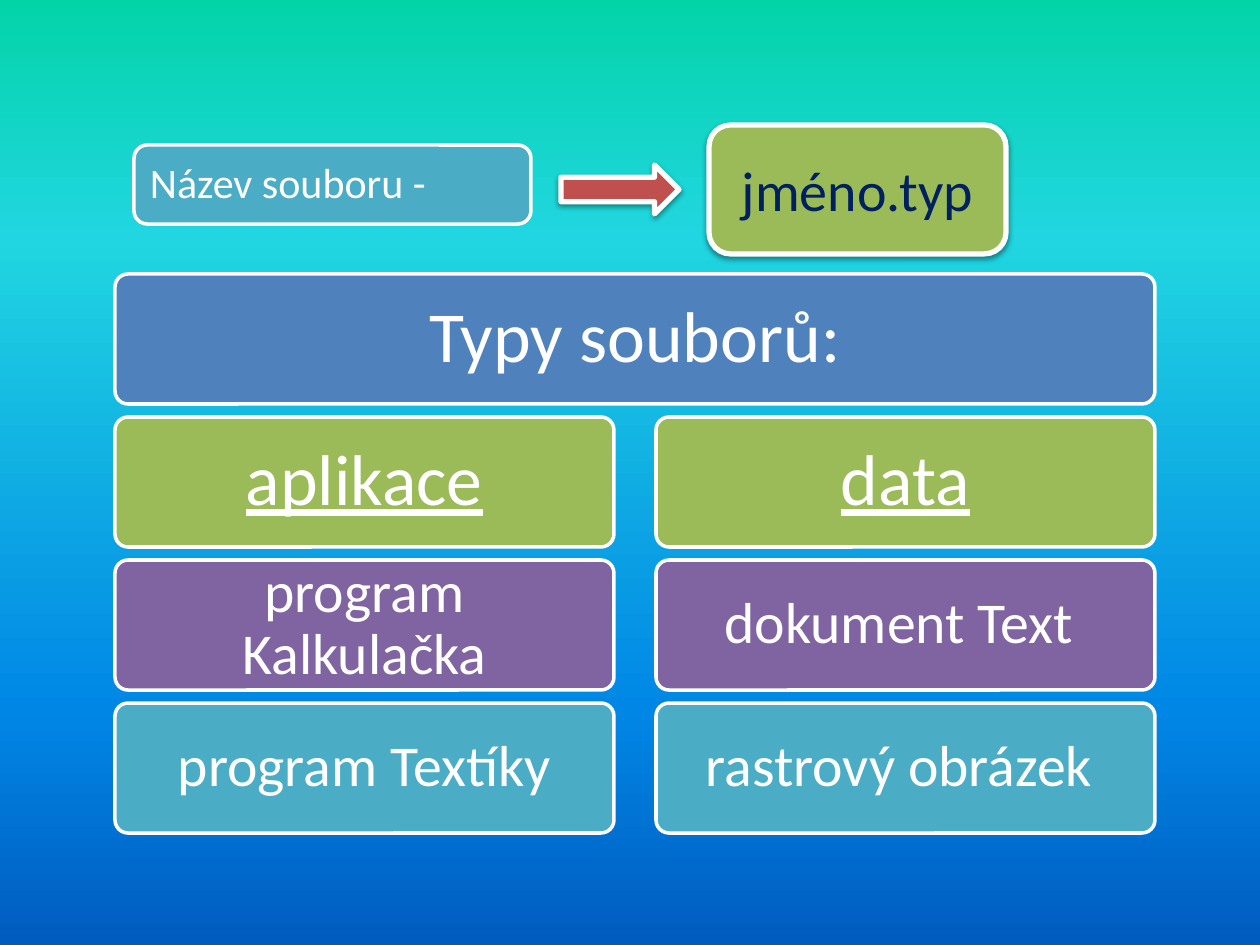
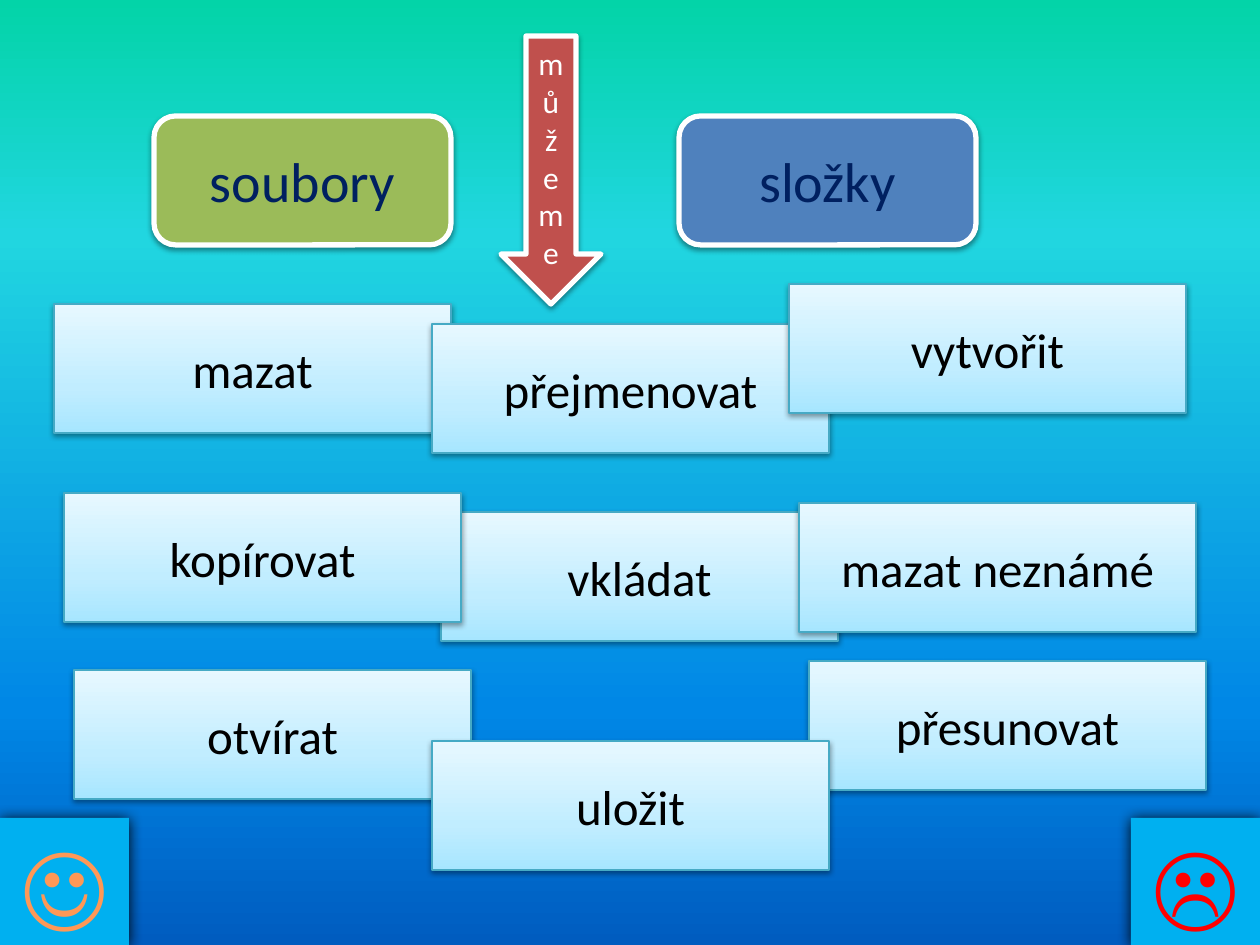
"""Two slides about file types and what can be done with files and folders."""

import dataclasses

import lxml.etree
import pptx
import pptx.dml.color
import pptx.enum.shapes
import pptx.enum.text
import pptx.oxml.ns
import pptx.util

SHAPE = pptx.enum.shapes.MSO_SHAPE
ALIGN = pptx.enum.text.PP_ALIGN
MIDDLE = pptx.enum.text.MSO_ANCHOR.MIDDLE
EMU_PER_PX = 914400 / 126
qn = pptx.oxml.ns.qn


@dataclasses.dataclass(frozen=True)
class Theme:
    font: str = "Calibri"
    white: str = "FFFFFF"
    black: str = "000000"
    navy: str = "002060"
    green: str = "9BBB59"
    blue: str = "4F81BD"
    purple: str = "8064A2"
    teal: str = "4BACC6"
    red: str = "C0504D"
    sky: str = "00B0F0"
    orange: str = "FF9856"
    alert: str = "FF0000"
    card_line: str = "46AAC5"
    backdrop: tuple = ((0, "03D4A8"), (25, "21D6E0"), (75, "0087E6"), (100, "005CBF"))
    card_fill: tuple = ((0, "A7E6FF"), (35, "C1EDFF"), (100, "E7F8FF"))
    soft_shadow: tuple = (38, 3.1, 1.6)
    deep_shadow: tuple = (100, 8.5, 1)
    heading: int = 41
    item: int = 33
    badge: int = 32
    card: int = 28
    label: int = 24
    arrow: int = 18
    face: int = 54


def px(length):
    return round(length * EMU_PER_PX)


def rgb(code):
    return pptx.dml.color.RGBColor.from_string(code)


def add_color(parent, code, alpha=100):
    color = lxml.etree.SubElement(parent, qn("a:srgbClr"), val=code)
    if alpha < 100:
        lxml.etree.SubElement(color, qn("a:alpha"), val=str(alpha * 1000))


def paint_gradient(fill, element, stops, angle):
    fill.gradient()
    fill.gradient_angle = angle
    stop_list = element.find(".//" + qn("a:gsLst"))
    for stop in list(stop_list):
        stop_list.remove(stop)
    for position, code in stops:
        stop = lxml.etree.SubElement(stop_list, qn("a:gs"), pos=str(position * 1000))
        add_color(stop, code)


class Painter:
    def __init__(self, deck, theme):
        self.deck = deck
        self.theme = theme
        self.page = None
        master = deck.slide_master
        paint_gradient(master.background.fill, master.element, theme.backdrop, 270)

    def new_page(self, layout):
        self.page = self.deck.slides.add_slide(self.deck.slide_layouts[layout])

    def shape(self, kind, area, fill, line=None, width=3, shadow=None):
        box = self.page.shapes.add_shape(kind, *map(px, area))
        if isinstance(fill, tuple):
            paint_gradient(box.fill, box.element, fill, 90)
        else:
            box.fill.solid()
            box.fill.fore_color.rgb = rgb(fill)
        if line:
            box.line.color.rgb = rgb(line)
            box.line.width = pptx.util.Pt(width)
        else:
            box.line.fill.background()
        box.shadow.inherit = False
        if shadow:
            self.shadow(box, *shadow)
        return box

    def shadow(self, box, alpha, blur, distance):
        effects = box.element.spPr.find(qn("a:effectLst"))
        outer = lxml.etree.SubElement(
            effects, qn("a:outerShdw"),
            blurRad=str(pptx.util.Pt(blur)), dist=str(pptx.util.Pt(distance)),
            dir="5400000", rotWithShape="0")
        add_color(outer, self.theme.black, alpha)

    def caption(self, box, text, size, color, align=ALIGN.CENTER, inset=None, spacing=None):
        frame = box.text_frame
        frame.text = text
        frame.word_wrap = True
        frame.auto_size = pptx.enum.text.MSO_AUTO_SIZE.NONE
        frame.vertical_anchor = MIDDLE
        if inset is not None:
            frame.margin_left = frame.margin_right = px(inset)
            frame.margin_top = frame.margin_bottom = px(inset)
        para = frame.paragraphs[0]
        para.alignment = align
        if spacing:
            para.line_spacing = spacing
        font = para.runs[0].font
        font.name = self.theme.font
        font.size = pptx.util.Pt(size)
        font.color.rgb = rgb(color)
        return font

    def panel(self, area, fill, rounding=0.1):
        box = self.shape(SHAPE.ROUNDED_RECTANGLE, area, fill, self.theme.white, 2)
        box.adjustments[0] = rounding
        return box

    def title(self, area, text, fill):
        title = self.page.shapes.title
        title.left, title.top, title.width, title.height = map(px, area)
        title.element.addprevious(self.panel(area, fill).element)
        self.caption(title, text, self.theme.heading, self.theme.white, inset=21, spacing=0.9)

    def tile(self, area, text, fill, size, inset, underline=False):
        font = self.caption(self.panel(area, fill), text, size, self.theme.white,
                            inset=inset, spacing=0.9)
        if underline:
            font.underline = True

    def label(self, area, text, fill):
        self.caption(self.panel(area, fill, 0.17), text, self.theme.label, self.theme.white,
                     ALIGN.LEFT, inset=12, spacing=0.9)

    def badge(self, left, top, text, fill):
        box = self.shape(SHAPE.FLOWCHART_ALTERNATE_PROCESS, (left, top, 297, 129), fill,
                         self.theme.white, shadow=self.theme.soft_shadow)
        self.caption(box, text, self.theme.badge, self.theme.navy)

    def arrow(self, kind, area, text=None):
        box = self.shape(kind, area, self.theme.red, self.theme.white,
                         shadow=self.theme.soft_shadow)
        if text:
            self.caption(box, text, self.theme.arrow, self.theme.white)

    def card(self, left, top, text):
        box = self.shape(SHAPE.FLOWCHART_PROCESS, (left, top, 397, 129), self.theme.card_fill,
                         self.theme.card_line, 0.75, self.theme.soft_shadow)
        self.caption(box, text, self.theme.card, self.theme.black)

    def face(self, left, text, color):
        box = self.shape(SHAPE.RECTANGLE, (left, 818, 129, 127), self.theme.sky,
                         shadow=self.theme.deep_shadow)
        self.caption(box, text, self.theme.face, color).bold = True


def build_file_types(painter):
    theme = painter.theme
    left, top, row_step, column_step = 115, 274, 143, 541
    tile_width, tile_height = 499, 130
    rows = (
        (("aplikace", "data"), theme.green, theme.heading, 21, True),
        (("program Kalkulačka", "dokument Text "), theme.purple, theme.item, 18, False),
        (("program Textíky", "rastrový obrázek "), theme.teal, theme.item, 18, False),
    )
    painter.new_page(5)
    painter.badge(709, 125, "jméno.typ", theme.green)
    painter.title((left, top, column_step + tile_width, tile_height),
                  "Typy souborů:", theme.blue)
    for row, (texts, fill, size, inset, underline) in enumerate(rows, 1):
        for column, text in enumerate(texts):
            area = (left + column * column_step, top + row * row_step,
                    tile_width, tile_height)
            painter.tile(area, text, fill, size, inset, underline)
    painter.label((134, 145, 397, 79), "Název souboru -", theme.teal)
    painter.arrow(SHAPE.RIGHT_ARROW, (561, 165, 118, 49))


def build_operations(painter):
    theme = painter.theme
    cards = (
        (74, 670, "otvírat"), (809, 661, "přesunovat"), (54, 304, "mazat"),
        (432, 741, "uložit"), (441, 512, "vkládat"), (799, 503, "mazat neznámé"),
        (432, 324, "přejmenovat"), (789, 284, "vytvořit"), (64, 493, "kopírovat"),
    )
    painter.new_page(6)
    painter.badge(154, 116, "soubory", theme.green)
    painter.badge(679, 116, "složky", theme.blue)
    for left, top, text in cards:
        painter.card(left, top, text)
    painter.arrow(SHAPE.DOWN_ARROW, (501, 36, 100, 268), "můžeme")
    painter.face(0, "☺", theme.orange)
    painter.face(1131, "☹", theme.alert)


def main():
    deck = pptx.Presentation()
    deck.slide_width, deck.slide_height = px(1260), px(945)
    painter = Painter(deck, Theme())
    build_file_types(painter)
    build_operations(painter)
    deck.save("out.pptx")


if __name__ == "__main__":
    main()
